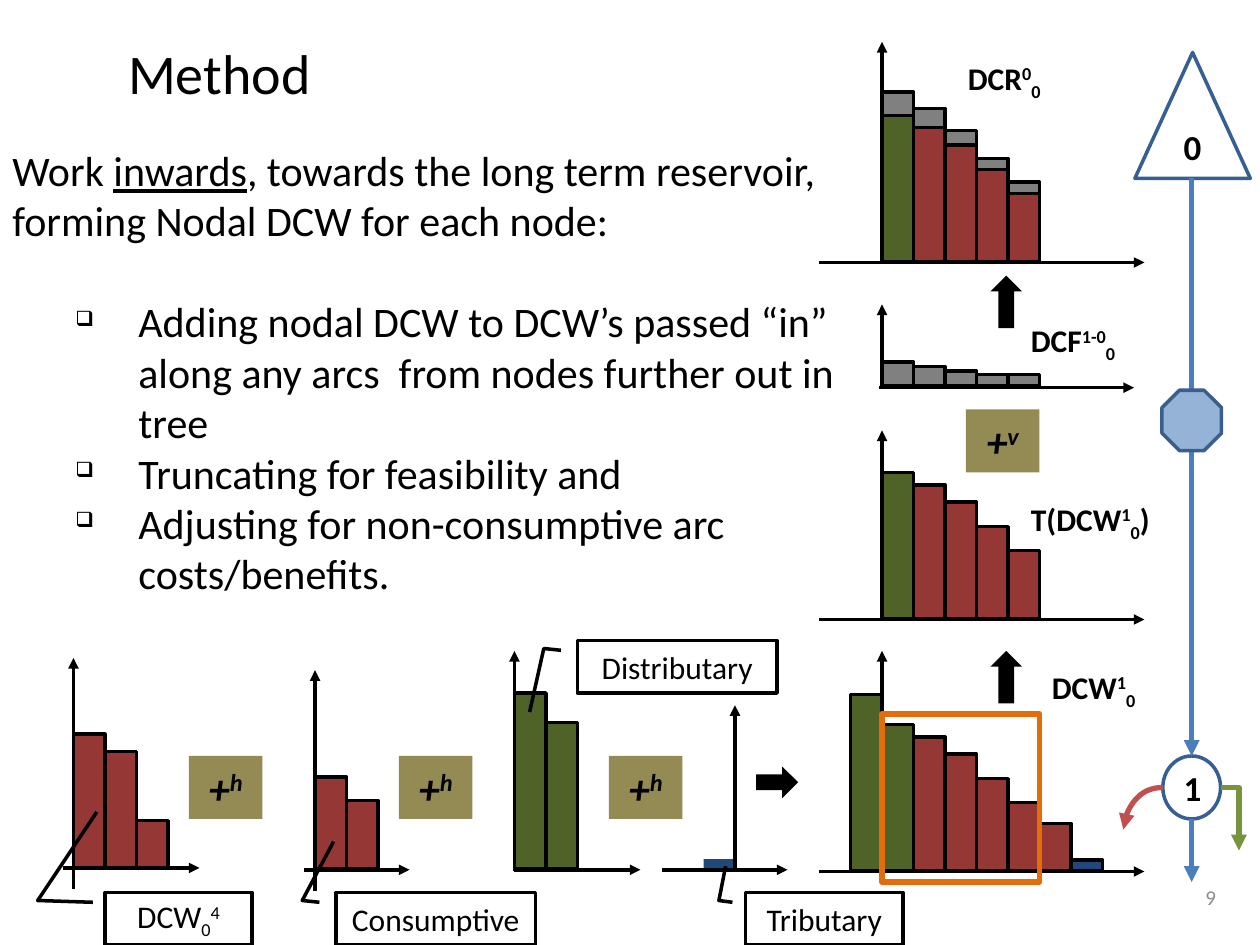
from lxml import etree
from pptx import Presentation
from pptx.dml.color import RGBColor
from pptx.enum.shapes import MSO_CONNECTOR, MSO_SHAPE
from pptx.enum.text import MSO_ANCHOR, PP_ALIGN
from pptx.oxml.ns import qn
from pptx.util import Pt

STRAIGHT, ELBOW, CURVE = MSO_CONNECTOR.STRAIGHT, MSO_CONNECTOR.ELBOW, MSO_CONNECTOR.CURVE
RECTANGLE, CALLOUT = MSO_SHAPE.RECTANGLE, MSO_SHAPE.LINE_CALLOUT_2
UP_ARROW, RIGHT_ARROW = MSO_SHAPE.UP_ARROW, MSO_SHAPE.RIGHT_ARROW
TRIANGLE, OVAL, OCTAGON = MSO_SHAPE.ISOSCELES_TRIANGLE, MSO_SHAPE.OVAL, MSO_SHAPE.OCTAGON
LEFT, CENTER, RIGHT = PP_ALIGN.LEFT, PP_ALIGN.CENTER, PP_ALIGN.RIGHT
TOP, MIDDLE = MSO_ANCHOR.TOP, MSO_ANCHOR.MIDDLE

FONT = "Calibri"
BLACK, RED, GREEN, BLUE, GREY = "000000", "953735", "4F6228", "1F497D", "808080"
KHAKI, NODE_LINE, ARC_BLUE, ORANGE = "948A54", "376092", "4B7EBC", "E46C0A"
SUPER, SUB = {"baseline": "30000"}, {"baseline": "-25000"}
BAR_WIDTH = 18

# Content: runs are (text, extra run attributes)
TITLE = [("Method", {})]
INTRO = [("Work ", {}), ("inwards", {"u": "sng"}),
         (", towards the long term reservoir, forming Nodal DCW for each node:", {})]
STEPS = [
    "Adding nodal DCW to DCW’s passed “in” along any arcs  from nodes further out in tree",
    "Truncating for feasibility and",
    "Adjusting for non-consumptive arc costs/benefits.",
]

# Bar charts: left of bars, base, bars, vertical axis, horizontal axis.
# Each bar is a stack of (colour, height) from the base up.
NODAL = [(GREEN, 83.5), (RED, 76.5), (RED, 66.5), (RED, 52.5), (RED, 39)]
ARC = [(GREY, 13.5), (GREY, 11), (GREY, 8.5), (GREY, 6.5), (GREY, 6.5)]
CHARTS = [
    dict(left=42, base=496, bars=[[(RED, 76.5)], [(RED, 66.5)], [(RED, 27)]],
         vertical=(42, 508, 376), horizontal=(36, 114, 496)),
    dict(left=180, base=496.5, bars=[[(RED, 52.5)], [(RED, 39)]],
         vertical=(180, 509, 383), horizontal=(174, 234, 497)),
    dict(left=294, base=496.5, bars=[[(GREEN, 100.5)], [(GREEN, 83.5)]],
         vertical=(294, 498, 372), horizontal=(294, 366, 497)),
    dict(left=402, base=497, bars=[[(BLUE, 6)]], outline=None,
         vertical=(420, 498, 403), horizontal=(378, 450, 497)),
    dict(left=486, base=497.5,
         bars=[[bar] for bar in [(GREEN, 100.5), *NODAL, (RED, 27), (BLUE, 6)]],
         vertical=(504, 498, 372), horizontal=(468, 654, 498)),
    dict(left=504, base=220.5, bars=[[bar] for bar in ARC],
         vertical=(504, 222, 174), horizontal=(502.5, 648, 221.5)),
    dict(left=504, base=149.5, bars=list(zip(NODAL, ARC)),
         vertical=(504, 150, 24), horizontal=(468, 654, 150)),
    dict(left=504, base=353.5, bars=[[bar] for bar in NODAL],
         vertical=(504, 354, 246), horizontal=(468, 654, 354)),
]
BADGES = [(108, 432, "h"), (228, 432, "h"), (348, 432, "h"), (552, 234, "v")]
BLOCK_ARROWS = [(RIGHT_ARROW, 432, 438, 24, 18), (UP_ARROW, 566, 372, 18, 30),
                (UP_ARROW, 566, 157.5, 18, 30)]
# Callouts: box, then end of the pointer as (y, x) shares of the box, and its knee
CALLOUTS = [
    ((60, 510, 84, 30), -0.458, (-1.535, -0.056),
     [("DCW", {}), ("0", SUB), ("4", SUPER)]),
    ((192, 510, 114, 30), -0.169, (-0.969, -0.012), [("Consumptive", {})]),
    ((330, 366, 114, 30), -0.169, (1.365, -0.24), [("Distributary", {})]),
    ((426, 510, 90, 30), -0.169, (-0.502, -0.126), [("Tributary", {})]),
]
LABELS = [
    (582, 180, 78, [("DCF", {}), ("1-0", SUPER), ("0", SUB)]),
    (546, 30, 78, [("DCR", {}), ("0", SUPER), ("0", SUB)]),
    (594, 378, 78, [("DCW", {}), ("1", SUPER), ("0", SUB)]),
    (582, 282, 90, [("T(DCW", {}), ("1", SUPER), ("0", SUB), (")", {})]),
]


def rgb(color):
    return RGBColor.from_string(color)


def write(paragraph, runs, color=BLACK, align=LEFT, **formats):
    paragraph.alignment = align
    for text, attributes in runs:
        run = paragraph.add_run()
        run.text = text
        run.font.name = FONT
        run.font.color.rgb = rgb(color)
        for name, value in formats.items():
            setattr(run.font, name, value)
        for name, value in attributes.items():
            run.font._element.set(name, value)


def add_shape(shapes, kind, box, fill=None, line=None, width=2):
    shape = shapes.add_shape(kind, *map(Pt, box))
    shape.shadow.inherit = False
    if fill:
        shape.fill.solid()
        shape.fill.fore_color.rgb = rgb(fill)
    else:
        shape.fill.background()
    if line:
        shape.line.color.rgb = rgb(line)
        shape.line.width = Pt(width)
    else:
        shape.line.fill.background()
    return shape


def add_arrow(shapes, start, end, color=BLACK, width=2, kind=STRAIGHT, preset=None):
    arrow = shapes.add_connector(kind, *map(Pt, (*start, *end)))
    arrow.line.color.rgb = rgb(color)
    arrow.line.width = Pt(width)
    properties = arrow._element.spPr
    etree.SubElement(properties.find(qn("a:ln")), qn("a:tailEnd"), type="triangle")
    etree.SubElement(properties, qn("a:effectLst"))
    if preset:
        properties.find(qn("a:prstGeom")).set("prst", preset)
    return arrow


def add_text(shapes, box, anchor=TOP):
    frame = shapes.add_textbox(*map(Pt, box)).text_frame
    frame.word_wrap = True
    frame.vertical_anchor = anchor
    return frame


def add_bars(slide, left, base, bars, vertical, horizontal, outline=BLACK):
    shapes = slide.shapes.add_group_shape().shapes
    for column, stack in enumerate(bars):
        top = base
        for color, height in stack:
            top -= height
            box = (left + column * BAR_WIDTH, top, BAR_WIDTH, height)
            add_shape(shapes, RECTANGLE, box, color, outline)
    x, bottom, tip = vertical
    add_arrow(shapes, (x, bottom), (x, tip))
    start, end, y = horizontal
    add_arrow(shapes, (start, y), (end, y))


def add_bullet(paragraph):
    paragraph.level = 1
    properties = paragraph._p.get_or_add_pPr()
    properties.set("marL", str(Pt(72)))
    properties.set("indent", str(-Pt(36)))
    etree.SubElement(properties, qn("a:buSzPct"), val="50000")
    etree.SubElement(properties, qn("a:buChar"), char="❑")


def main():
    presentation = Presentation()
    presentation.slide_width, presentation.slide_height = Pt(720), Pt(540)
    slide = presentation.slides.add_slide(presentation.slide_layouts[5])
    shapes = slide.shapes

    # Title and slide number
    title = shapes.title
    title.left, title.top, title.width, title.height = map(Pt, (66, 16, 384, 50))
    title.text_frame.vertical_anchor = MIDDLE
    write(title.text_frame.paragraphs[0], TITLE, size=Pt(32))
    number = add_text(shapes, (666, 498, 36, 29), MIDDLE)
    write(number.paragraphs[0], [("9", {})], "8C8C8C", RIGHT, size=Pt(12))

    # Node tree on the right
    reservoir = add_shape(shapes, TRIANGLE, (648.5, 30, 66, 72), line=NODE_LINE)
    node = add_shape(shapes, OVAL, (664.5, 432, 33, 36), line=NODE_LINE)
    for shape, name in ((reservoir, "0"), (node, "1")):
        write(shape.text_frame.paragraphs[0], [(name, {})], align=CENTER,
              size=Pt(20), bold=True)
    arc = add_arrow(shapes, (681, 102), (681, 432), ARC_BLUE, 3)
    arc.end_connect(node, 0)
    add_shape(shapes, OCTAGON, (664, 223, 34, 34.5), "95B3D7", "3A5F8C")
    add_arrow(shapes, (681, 468), (681, 504), ARC_BLUE, 3)
    add_arrow(shapes, (697.5, 450), (708, 486), "77933C", 3, ELBOW, "bentConnector2")
    add_arrow(shapes, (664.5, 450), (642, 474), "C0504D", 3, CURVE, "curvedConnector2")

    # Bar charts and the operators between them
    for chart in CHARTS:
        add_bars(slide, **chart)
    for left, top, direction in BADGES:
        badge = add_shape(shapes, RECTANGLE, (left, top, 42, 36), KHAKI)
        badge.text_frame.vertical_anchor = TOP
        write(badge.text_frame.paragraphs[0], [("+", {}), (direction, SUPER)],
              align=CENTER, size=Pt(24), bold=True, italic=True)
    for kind, *box in BLOCK_ARROWS:
        add_shape(shapes, kind, box, BLACK)

    # Callouts and chart labels
    for box, knee, tip, runs in CALLOUTS:
        callout = add_shape(shapes, CALLOUT, box, line=BLACK)
        for index, value in enumerate((0.188, -0.083, 0.154, knee, *tip)):
            callout.adjustments[index] = value
        write(callout.text_frame.paragraphs[0], runs, align=CENTER, size=Pt(18))
    for left, top, width, runs in LABELS:
        label = add_text(shapes, (left, top, width, 29))
        write(label.paragraphs[0], runs, size=Pt(18), bold=True)

    # Body text
    body = add_text(shapes, (0, 79, 492, 269))
    write(body.paragraphs[0], INTRO, size=Pt(24))
    for index, step in enumerate(STEPS):
        paragraph = body.add_paragraph()
        paragraph.space_before = Pt(0 if index else 29)
        add_bullet(paragraph)
        write(paragraph, [(step, {})], size=Pt(24))

    # Truncation window
    add_shape(shapes, RECTANGLE, (504, 408, 90, 96), line=ORANGE, width=3.25)

    presentation.save("out.pptx")


if __name__ == "__main__":
    main()
